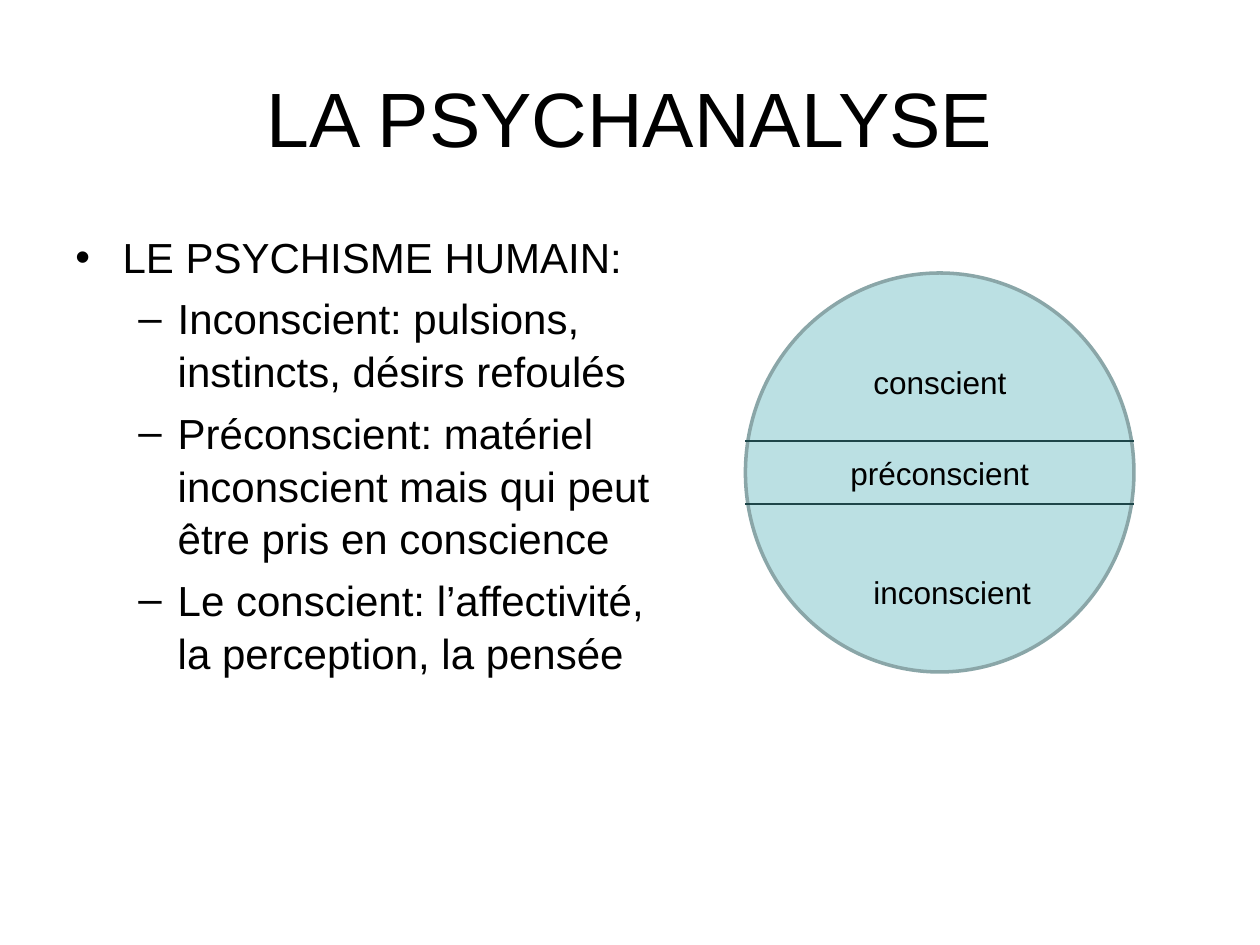
import pptx
import pptx.util
import pptx.dml.color
import pptx.enum.shapes
import pptx.enum.text
import pptx.oxml.ns
import lxml.etree

Pt = pptx.util.Pt
ALIGN = pptx.enum.text.PP_ALIGN
ANCHOR = pptx.enum.text.MSO_ANCHOR
qn = pptx.oxml.ns.qn


def color(value):
    return pptx.dml.color.RGBColor.from_string(value)


def write(frame, text, *, size, align=ALIGN.LEFT, anchor=ANCHOR.TOP, wrap=True,
          bullet=None, left=0, hanging=0, level=0, before=0, spacing=None, first=True):
    frame.word_wrap = wrap
    frame.vertical_anchor = anchor
    paragraph = frame.paragraphs[0] if first else frame.add_paragraph()
    paragraph.alignment = align
    paragraph.level = level
    if spacing:
        paragraph.line_spacing = spacing
    if not first:
        paragraph.space_before = Pt(before)
    if bullet:
        properties = paragraph._p.get_or_add_pPr()
        properties.set("marL", str(Pt(left)))
        properties.set("indent", str(Pt(-hanging)))
        lxml.etree.SubElement(properties, qn("a:buFont")).set("typeface", "Arial")
        lxml.etree.SubElement(properties, qn("a:buChar")).set("char", bullet)
    run = paragraph.add_run()
    run.text = text
    run.font.name = "Arial"
    run.font.size = Pt(size)
    run.font.color.rgb = color("000000")


deck = pptx.Presentation()
deck.slide_width, deck.slide_height = Pt(720), Pt(540)
slide = deck.slides.add_slide(deck.slide_layouts[6])
shapes = slide.shapes

# Title
title = shapes.add_textbox(Pt(36), Pt(21.6), Pt(648), Pt(90))
write(title.text_frame, "LA PSYCHANALYSE", size=44, align=ALIGN.CENTER, anchor=ANCHOR.MIDDLE)

# Levels of the human psyche
outline = shapes.add_textbox(Pt(36), Pt(126), Pt(360), Pt(356.4)).text_frame
outline.margin_top = Pt(5)
write(outline, "LE PSYCHISME HUMAIN:", size=24, bullet="•", left=27, hanging=27, spacing=1.05)
for level_text in (
    "Inconscient: pulsions, instincts, désirs refoulés",
    "Préconscient: matériel inconscient mais qui peut être pris en conscience",
    "Le conscient: l’affectivité, la perception, la pensée",
):
    write(outline, level_text, size=24, bullet="–", left=58.5, hanging=22.5,
          level=1, before=4.8, spacing=1.05, first=False)

# Circle of the psyche
psyche_left, psyche_width = 426, 222
psyche = shapes.add_shape(pptx.enum.shapes.MSO_SHAPE.OVAL,
                          Pt(psyche_left), Pt(156), Pt(psyche_width), Pt(228))
psyche.shadow.inherit = False
psyche.fill.solid()
psyche.fill.fore_color.rgb = color("BBE0E3")
psyche.line.color.rgb = color("8AA6A8")
psyche.line.width = Pt(2)
write(psyche.text_frame, "préconscient", size=18, align=ALIGN.CENTER,
      anchor=ANCHOR.MIDDLE, wrap=False)

# Borders of the preconscious
for border_y in (288, 252):
    border = shapes.add_connector(pptx.enum.shapes.MSO_CONNECTOR.STRAIGHT,
                                  Pt(psyche_left), Pt(border_y),
                                  Pt(psyche_left + psyche_width), Pt(border_y))
    border.line.color.rgb = color("1E4649")
    border.line.width = Pt(0.75)
    lxml.etree.SubElement(border._element.spPr, qn("a:effectLst"))

# Labels above and below
for label_text, label_y, label_width in (("conscient", 204, 90.5), ("inconscient", 324, 104.5)):
    label = shapes.add_textbox(Pt(492), Pt(label_y), Pt(label_width), Pt(29))
    write(label.text_frame, label_text, size=18, wrap=False)

deck.save("out.pptx")
